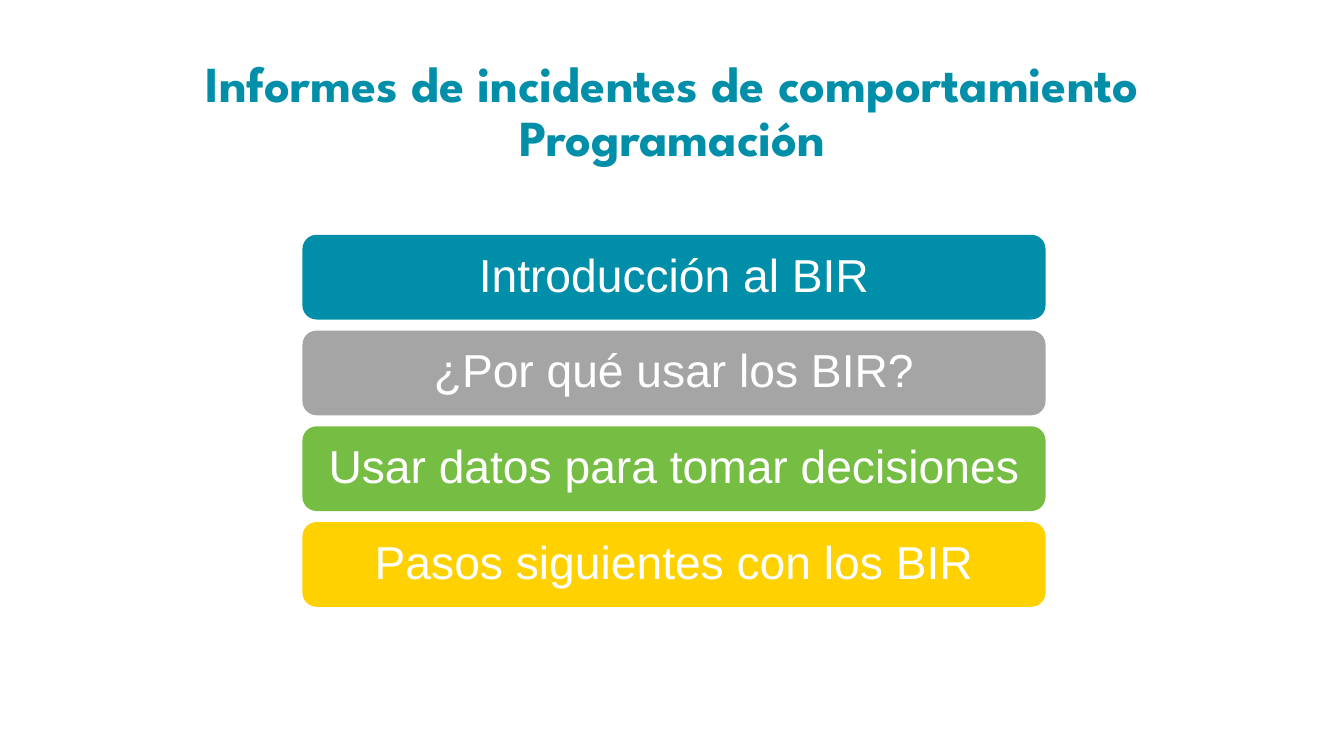
from dataclasses import dataclass

import pptx
import pptx.dml.color
import pptx.enum.shapes
import pptx.enum.text
import pptx.util
from pptx.util import Inches


@dataclass(frozen=True)
class Theme:
    teal: str = "008EA9"
    grey: str = "A5A5A5"
    green: str = "75BD43"
    yellow: str = "FFD100"
    white: str = "FFFFFF"
    title_font: str = "League Spartan"
    body_font: str = "Arial"
    title_size: int = 36
    bar_size: int = 33


THEME = Theme()

TITLE = "Informes de incidentes de comportamiento\vProgramación"
AGENDA = [
    ("Introducción al BIR", THEME.teal),
    ("¿Por qué usar los BIR?", THEME.grey),
    ("Usar datos para tomar decisiones", THEME.green),
    ("Pasos siguientes con los BIR", THEME.yellow),
]

BAR_LEFT, BAR_TOP = 3, 2.33
BAR_WIDTH, BAR_HEIGHT = 7.37, 0.84
BAR_PITCH = 0.95
BAR_MARGIN = 0.14


def rgb(color):
    return pptx.dml.color.RGBColor.from_string(color)


def set_centred_text(shape, text, font_name, size, color, bold=False):
    frame = shape.text_frame
    frame.word_wrap = True
    frame.auto_size = pptx.enum.text.MSO_AUTO_SIZE.NONE
    frame.vertical_anchor = pptx.enum.text.MSO_ANCHOR.MIDDLE
    frame.text = text
    paragraph = frame.paragraphs[0]
    paragraph.alignment = pptx.enum.text.PP_ALIGN.CENTER
    paragraph.line_spacing = 0.9
    paragraph.space_before = pptx.util.Pt(0)
    for run in paragraph.runs:
        run.font.name = font_name
        run.font.size = pptx.util.Pt(size)
        run.font.bold = bold
        run.font.color.rgb = rgb(color)


def add_title(slide):
    title = slide.shapes.title
    title.left, title.top = Inches(0.92), Inches(0.4)
    title.width, title.height = Inches(11.5), Inches(1.45)
    set_centred_text(title, TITLE, THEME.title_font, THEME.title_size,
                     THEME.teal, bold=True)


def add_agenda_bar(slide, top, text, color):
    bar = slide.shapes.add_shape(
        pptx.enum.shapes.MSO_SHAPE.ROUNDED_RECTANGLE,
        Inches(BAR_LEFT), Inches(top), Inches(BAR_WIDTH), Inches(BAR_HEIGHT))
    bar.shadow.inherit = False
    bar.fill.solid()
    bar.fill.fore_color.rgb = rgb(color)
    bar.line.fill.background()
    frame = bar.text_frame
    frame.margin_left = frame.margin_right = Inches(BAR_MARGIN)
    frame.margin_top = frame.margin_bottom = Inches(BAR_MARGIN)
    set_centred_text(bar, text, THEME.body_font, THEME.bar_size, THEME.white)


def main():
    presentation = pptx.Presentation()
    presentation.slide_width = Inches(13.33)
    presentation.slide_height = Inches(7.5)
    title_only = presentation.slide_layouts[5]
    slide = presentation.slides.add_slide(title_only)
    add_title(slide)
    for index, (text, color) in enumerate(AGENDA):
        add_agenda_bar(slide, BAR_TOP + index * BAR_PITCH, text, color)
    presentation.save("out.pptx")


if __name__ == "__main__":
    main()
